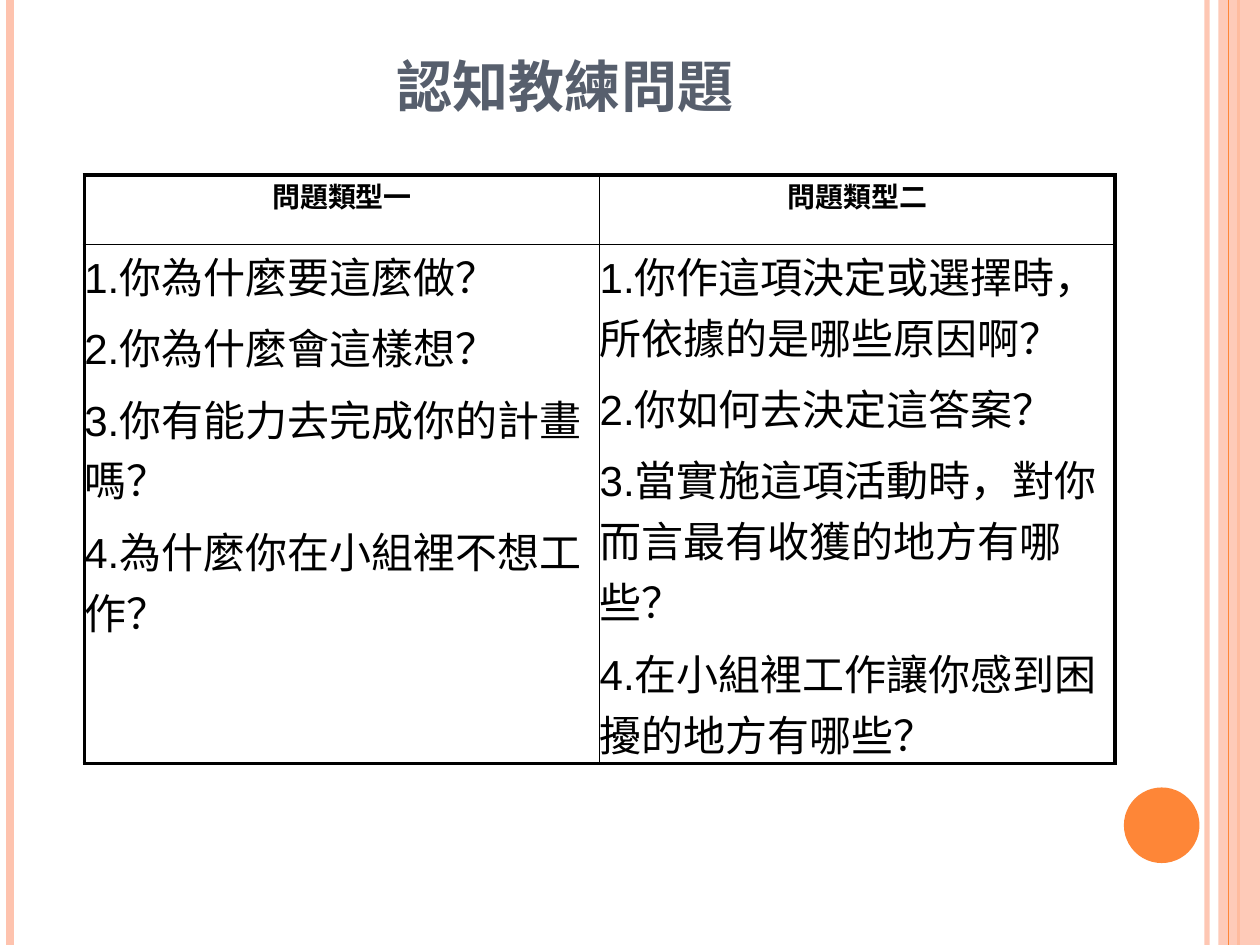
from lxml.etree import SubElement
from pptx import Presentation
from pptx.dml.color import RGBColor
from pptx.enum.shapes import MSO_CONNECTOR, MSO_SHAPE
from pptx.enum.text import MSO_ANCHOR, PP_ALIGN
from pptx.oxml.ns import qn
from pptx.util import Inches, Pt

PEACH, ORANGE, SLATE, BLACK = "FEC3AE", "FE8637", "575F6D", "000000"
HEADER = {"size": Pt(16), "name": "Arial", "bold": True}
BODY = {"size": Pt(24), "name": "Arial", "bold": False}
TITLE = {"size": Pt(32), "name": "Times New Roman", "bold": True}
OUTER, INNER = 2.25, 1
COLUMN_WIDTH, ROW_HEIGHTS = 4.09, (0.55, 3.95)

QUESTIONS = {
    "問題類型一": [
        "1.你為什麼要這麼做？",
        "2.你為什麼會這樣想？",
        "3.你有能力去完成你的計畫嗎？",
        "4.為什麼你在小組裡不想工作？",
    ],
    "問題類型二": [
        "1.你作這項決定或選擇時，所依據的是哪些原因啊？",
        "2.你如何去決定這答案？",
        "3.當實施這項活動時，對你而言最有收獲的地方有哪些？",
        "4.在小組裡工作讓你感到困擾的地方有哪些？",
    ],
}


def color(value):
    return RGBColor.from_string(value)


def set_alpha(element, percent):
    rgb = next(element.iter(qn("a:srgbClr")))
    SubElement(rgb, qn("a:alpha"), val=str(percent * 1000))


def add_vertical_line(slide, x, hex_color, width, alpha=100):
    line = slide.shapes.add_connector(
        MSO_CONNECTOR.STRAIGHT, Inches(x), 0, Inches(x), Inches(7.5))
    line.line.color.rgb = color(hex_color)
    line.line.width = Pt(width)
    properties = line._element.spPr
    if alpha < 100:
        set_alpha(properties, alpha)
    SubElement(properties, qn("a:effectLst"))


def add_filled_shape(slide, kind, box, hex_color, alpha=100):
    shape = slide.shapes.add_shape(kind, *map(Inches, box))
    shape.shadow.inherit = False
    shape.fill.solid()
    shape.fill.fore_color.rgb = color(hex_color)
    shape.line.fill.background()
    if alpha < 100:
        set_alpha(shape._element.spPr, alpha)


def write_paragraphs(frame, lines, font, hex_color, alignment, gap=0):
    for index, text in enumerate(lines):
        paragraph = frame.add_paragraph() if index else frame.paragraphs[0]
        paragraph.alignment = alignment
        # Keep closing punctuation inside the margins
        paragraph._p.get_or_add_pPr().set("hangingPunct", "0")
        if index:
            paragraph.space_before = Pt(gap)
        run = paragraph.add_run()
        run.text = text
        for name, value in font.items():
            setattr(run.font, name, value)
        run.font.color.rgb = color(hex_color)


def set_borders(cell, widths):
    properties = cell._tc.get_or_add_tcPr()
    for index, (side, width) in enumerate(widths.items()):
        border = SubElement(properties, qn(f"a:ln{side}"), w=str(Pt(width)))
        fill = SubElement(border, qn("a:solidFill"))
        SubElement(fill, qn("a:srgbClr"), val=BLACK)
        properties.insert(index, border)


def add_question_table(slide):
    columns, rows = len(QUESTIONS), len(ROW_HEIGHTS)
    table = slide.shapes.add_table(
        rows, columns, Inches(0.67), Inches(1.39),
        Inches(COLUMN_WIDTH * columns), Inches(sum(ROW_HEIGHTS))).table
    table.first_row = table.horz_banding = False
    for row, height in zip(table.rows, ROW_HEIGHTS):
        row.height = Inches(height)
    for column, (heading, questions) in enumerate(QUESTIONS.items()):
        table.columns[column].width = Inches(COLUMN_WIDTH)
        contents = (([heading], HEADER, PP_ALIGN.CENTER),
                    (questions, BODY, PP_ALIGN.LEFT))
        for row, (lines, font, alignment) in enumerate(contents):
            cell = table.cell(row, column)
            for side in ("left", "right", "top", "bottom"):
                setattr(cell, f"margin_{side}", 0)
            cell.fill.background()
            write_paragraphs(cell.text_frame, lines, font, BLACK, alignment, gap=6)
            set_borders(cell, {
                "L": INNER if column else OUTER,
                "R": OUTER if column == columns - 1 else INNER,
                "T": INNER if row else OUTER,
                "B": OUTER if row == rows - 1 else INNER,
            })


def add_title(slide, text):
    box = slide.shapes.add_textbox(*map(Inches, (1.14, 0.36, 6.69, 0.63)))
    frame = box.text_frame
    frame.word_wrap = True
    frame.vertical_anchor = MSO_ANCHOR.MIDDLE
    write_paragraphs(frame, [text], TITLE, SLATE, PP_ALIGN.CENTER)


def main():
    presentation = Presentation()
    presentation.slide_width, presentation.slide_height = Inches(10), Inches(7.5)
    slide = presentation.slides.add_slide(presentation.slide_layouts[6])

    # Edge stripes and corner circle
    add_vertical_line(slide, 9.58, PEACH, 3, alpha=93)
    add_vertical_line(slide, 0.08, PEACH, 4.5)
    add_vertical_line(slide, 9.83, ORANGE, 1.5)
    add_filled_shape(slide, MSO_SHAPE.RECTANGLE, (9.67, 0, 0.33, 7.5), PEACH, alpha=87)
    add_vertical_line(slide, 9.75, ORANGE, 0.75)
    add_filled_shape(slide, MSO_SHAPE.OVAL, (8.92, 6.25, 0.6, 0.6), ORANGE)

    # Content
    add_question_table(slide)
    add_title(slide, "認知教練問題")
    presentation.save("out.pptx")


if __name__ == "__main__":
    main()
